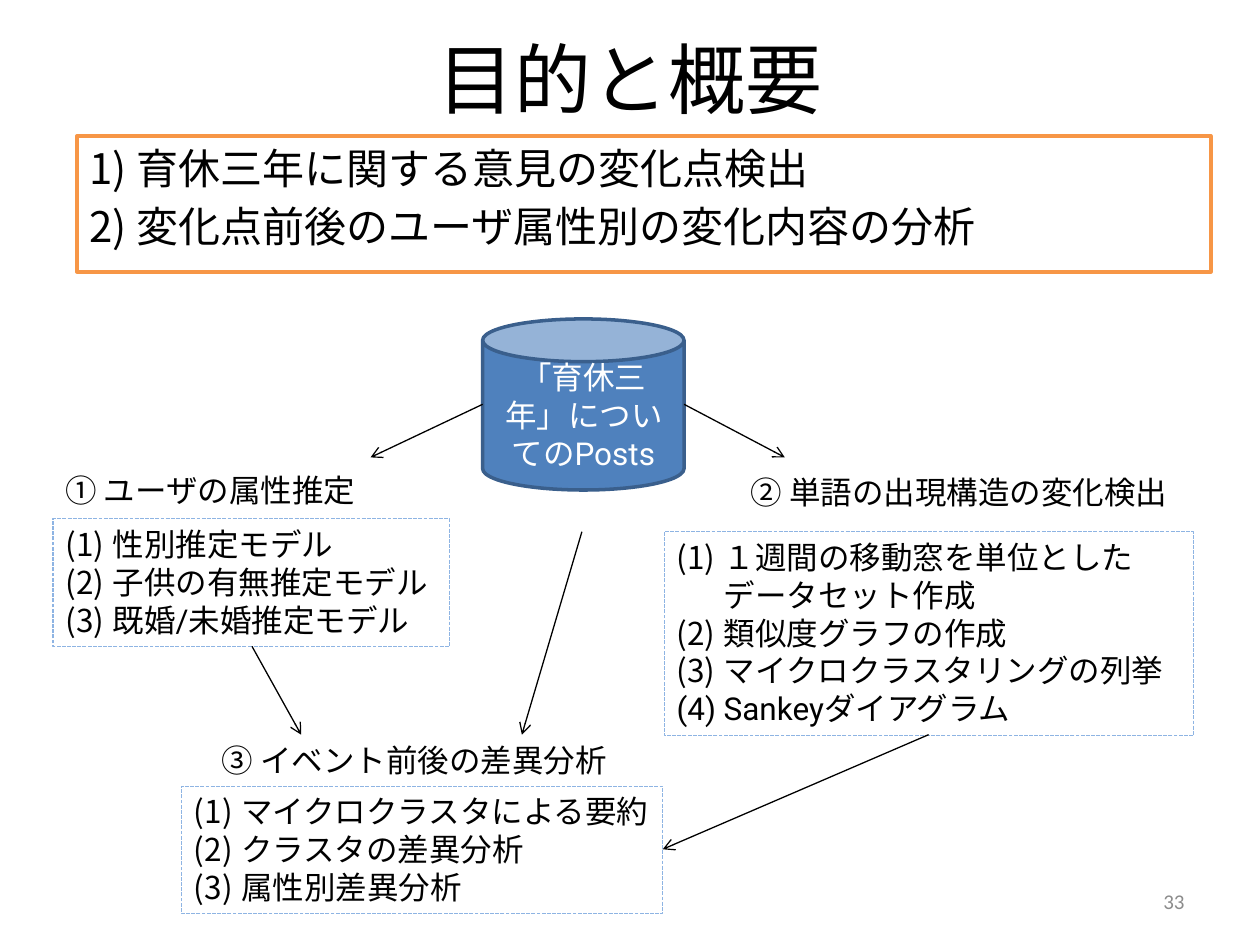
import pptx
import pptx.util
import pptx.dml.color
import pptx.enum.dml
import pptx.enum.lang
import pptx.enum.shapes
import pptx.enum.text
import pptx.oxml.ns
from lxml import etree

Cm, Pt = pptx.util.Cm, pptx.util.Pt
RGBColor = pptx.dml.color.RGBColor
SHAPE = pptx.enum.shapes.MSO_SHAPE
ALIGN = pptx.enum.text.PP_ALIGN
ANCHOR = pptx.enum.text.MSO_ANCHOR
qn = pptx.oxml.ns.qn

BLACK = RGBColor(0x00, 0x00, 0x00)
WHITE = RGBColor(0xFF, 0xFF, 0xFF)
GRAY = RGBColor(0x8C, 0x8C, 0x8C)
BLUE = RGBColor(0x4F, 0x81, 0xBD)
DARK_BLUE = RGBColor(0x3A, 0x5F, 0x8C)
LIGHT_BLUE = RGBColor(0x8E, 0xB4, 0xE3)
ORANGE = RGBColor(0xF7, 0x96, 0x46)

# Boxes are (left, top, width, height) in cm
TITLE = ("目的と概要", (1.27, 0.41, 22.86, 2.31))
GOALS = (["1) 育休三年に関する意見の変化点検出",
          "2) 変化点前後のユーザ属性別の変化内容の分析"],
         (1.55, 2.74, 22.86, 2.74))
DATA = ("「育休三年」についてのPosts", (9.73, 6.43, 4.06, 3.45))
NUMBER = ("33", (18.21, 17.65, 5.92, 1.02))

# Heading, heading box, numbered items, items box
STEPS = [
    ("① ユーザの属性推定", (1.07, 9.37, 6.88, 1.02),
     ["性別推定モデル", "子供の有無推定モデル", "既婚/未婚推定モデル"],
     (1.07, 10.46, 8, 2.57)),
    ("② 単語の出現構造の変化検出", (14.88, 9.42, 9.19, 1.02),
     ["１週間の移動窓を単位としたデータセット作成", "類似度グラフの作成",
      "マイクロクラスタリングの列挙", "Sankeyダイアグラム"],
     (13.39, 10.72, 10.67, 4.11)),
    ("③ イベント前後の差異分析", (4.22, 14.81, 8.64, 1.02),
     ["マイクロクラスタによる要約", "クラスタの差異分析", "属性別差異分析"],
     (3.66, 15.85, 9.7, 2.57)),
]

# (x1, y1, x2, y2) in cm
ARROWS = [
    (9.73, 8.15, 7.47, 9.22),
    (13.79, 8.15, 15.82, 9.22),
    (11.73, 10.72, 10.52, 14.81),
    (5.08, 13.03, 6.07, 14.81),
    (18.72, 14.81, 13.36, 17.12),
]


def cm(values):
    return [Cm(v) for v in values]


def write(sp, lines, size, font, color=BLACK, align=ALIGN.LEFT,
          anchor=ANCHOR.TOP, before=0, numbered=False):
    tf = sp.text_frame
    tf.word_wrap = True
    tf.vertical_anchor = anchor
    for i, line in enumerate(lines):
        p = tf.add_paragraph() if i else tf.paragraphs[0]
        p.alignment = align
        p.space_before = Pt(before)
        if numbered:
            pPr = p._p.get_or_add_pPr()
            pPr.set("marL", str(Cm(0.95)))
            pPr.set("indent", str(-Cm(0.95)))
            etree.SubElement(pPr, qn("a:buFont"), typeface="+mj-lt")
            etree.SubElement(pPr, qn("a:buAutoNum"), type="arabicParenBoth")
        r = p.add_run()
        r.text = line
        r.font.size = Pt(size)
        r.font.name = font
        r.font.color.rgb = color
        r.font.language_id = pptx.enum.lang.MSO_LANGUAGE_ID.JAPANESE


def add_box(s, kind, box, fill, line, width):
    sp = s.shapes.add_shape(kind, *cm(box))
    sp.shadow.inherit = False
    if fill is None:
        sp.fill.background()
    else:
        sp.fill.solid()
        sp.fill.fore_color.rgb = fill
    sp.line.color.rgb = line
    sp.line.width = Pt(width)
    return sp


def add_label(s, text, box, **style):
    write(s.shapes.add_textbox(*cm(box)), [text], font="Calibri", **style)


def add_arrow(s, ends):
    c = s.shapes.add_connector(pptx.enum.shapes.MSO_CONNECTOR.STRAIGHT, *cm(ends))
    c.line.color.rgb = BLACK
    c.line.width = Pt(0.75)
    etree.SubElement(c.line._get_or_add_ln(), qn("a:tailEnd"), type="arrow")
    etree.SubElement(c._element.spPr, qn("a:effectLst"))


def main():
    prs = pptx.Presentation()
    prs.slide_width, prs.slide_height = Cm(25.4), Cm(19.05)
    s = prs.slides.add_slide(prs.slide_layouts[5])

    text, box = TITLE
    title = s.shapes.title
    title.left, title.top, title.width, title.height = cm(box)
    write(title, [text], 44, "Calibri", align=ALIGN.CENTER, anchor=ANCHOR.MIDDLE)

    lines, box = GOALS
    sp = add_box(s, SHAPE.RECTANGLE, box, WHITE, ORANGE, 2)
    write(sp, lines, 24, "Noto Sans CJK JP", before=4.8)

    text, box = DATA
    sp = add_box(s, SHAPE.CAN, box, BLUE, DARK_BLUE, 2)
    write(sp, [text], 18, "Roboto", WHITE, ALIGN.CENTER, ANCHOR.MIDDLE)

    for heading, heading_box, items, items_box in STEPS:
        add_label(s, heading, heading_box, size=18)
        sp = add_box(s, SHAPE.RECTANGLE, items_box, None, LIGHT_BLUE, 0.75)
        sp.line.dash_style = pptx.enum.dml.MSO_LINE.SQUARE_DOT
        write(sp, items, 18, "Roboto", numbered=True)

    for ends in ARROWS:
        add_arrow(s, ends)

    text, box = NUMBER
    add_label(s, text, box, size=12, color=GRAY, align=ALIGN.RIGHT,
              anchor=ANCHOR.MIDDLE)
    prs.save("out.pptx")


if __name__ == "__main__":
    main()
